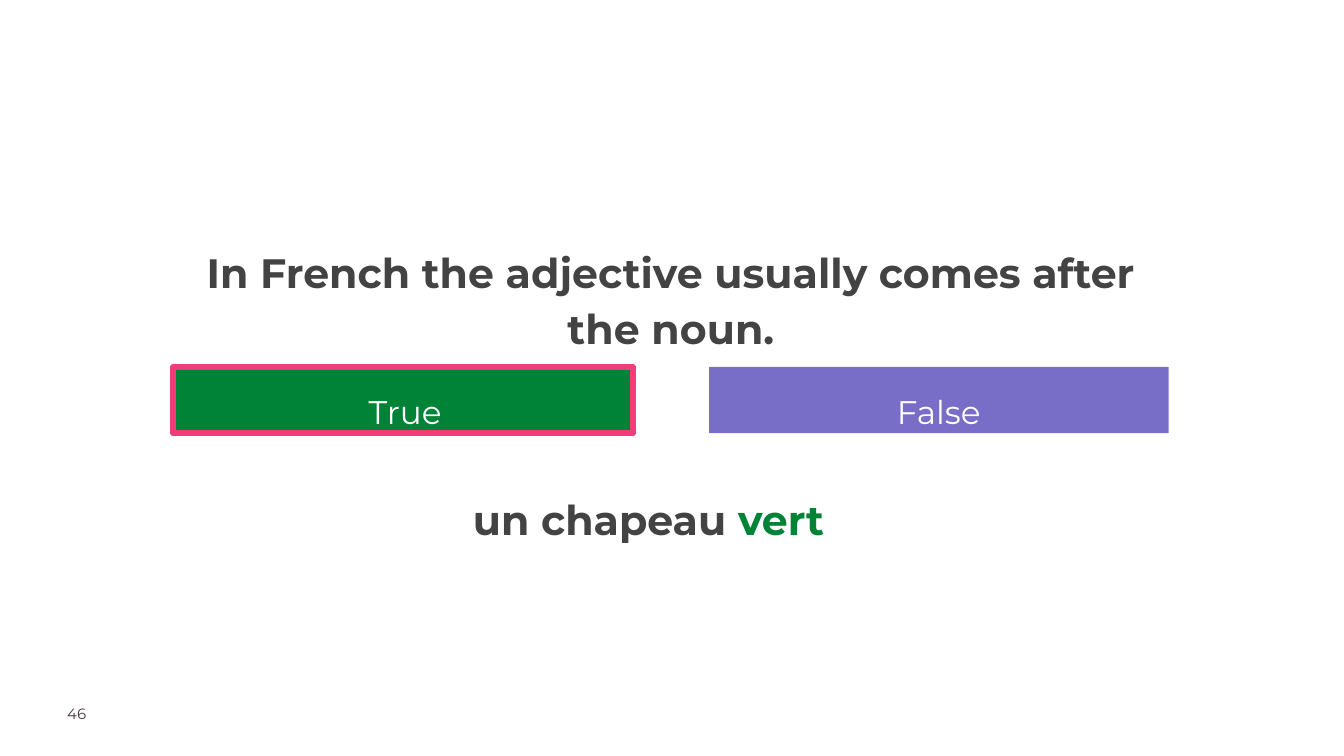
from pptx import Presentation
from pptx.dml.color import RGBColor
from pptx.enum import shapes, text
from pptx.util import Cm, Pt

GREEN = RGBColor(0x00, 0x82, 0x37)
VIOLET = RGBColor(0x78, 0x6E, 0xC8)
PINK = RGBColor(0xF0, 0x3C, 0x78)
GREY = RGBColor(0x43, 0x43, 0x43)
PLUM = RGBColor(0x4B, 0x32, 0x41)
WHITE = RGBColor(0xFF, 0xFF, 0xFF)

# Answer buttons share one row and one size
ROW, WIDE, HIGH = Cm(13.87), Cm(17.37), Cm(2.51)
LEFT = Cm(6.55)


def write(shape, runs, size, pad=0, bold=False, space=1.0, align=text.PP_ALIGN.CENTER):
    """Fill a shape with one paragraph of (words, colour) runs."""
    frame = shape.text_frame
    frame.word_wrap = True
    frame.vertical_anchor = text.MSO_ANCHOR.TOP
    frame.margin_left = frame.margin_right = Cm(pad)
    frame.margin_top = frame.margin_bottom = Cm(pad)
    para = frame.paragraphs[0]
    para.alignment = align
    para.line_spacing = space
    para.font.name = "Montserrat"
    para.font.size = Pt(size)
    para.font.bold = bold
    for words, colour in runs:
        run = para.add_run()
        run.text = words
        run.font.color.rgb = colour


def add_box(left):
    box = slide.shapes.add_shape(shapes.MSO_SHAPE.RECTANGLE, left, ROW, WIDE, HIGH)
    box.shadow.inherit = False
    return box


deck = Presentation()
deck.slide_width, deck.slide_height = Cm(50.8), Cm(28.58)
slide = deck.slides.add_slide(deck.slide_layouts[6])

# Answers
for word, left, fill in (("True", Cm(6.63), GREEN), ("False", Cm(26.8), VIOLET)):
    answer = add_box(left)
    answer.fill.solid()
    answer.fill.fore_color.rgb = fill
    answer.line.fill.background()
    write(answer, [(word, WHITE)], 35, pad=0.51, space=1.3)

# Page number
page = slide.shapes.add_textbox(Cm(2.54), Cm(26.62), Cm(4), Cm(1))
write(page, [("46", PLUM)], 16, align=text.PP_ALIGN.LEFT)

# Statement
title = slide.shapes.add_textbox(LEFT, Cm(9.07), Cm(37.62), Cm(4.52))
write(title, [("In French the adjective usually comes after the noun.", GREY)],
      44, bold=True, space=1.15)

# Frame around the right answer
frame = add_box(LEFT)
frame.fill.background()
frame.line.color.rgb = PINK
frame.line.width = Pt(6)

# Example
sample = slide.shapes.add_textbox(Cm(16.97), Cm(18.42), Cm(15.09), HIGH)
write(sample, [("un chapeau ", GREY), ("vert", GREEN)], 44, bold=True, space=1.15)

deck.save("out.pptx")
